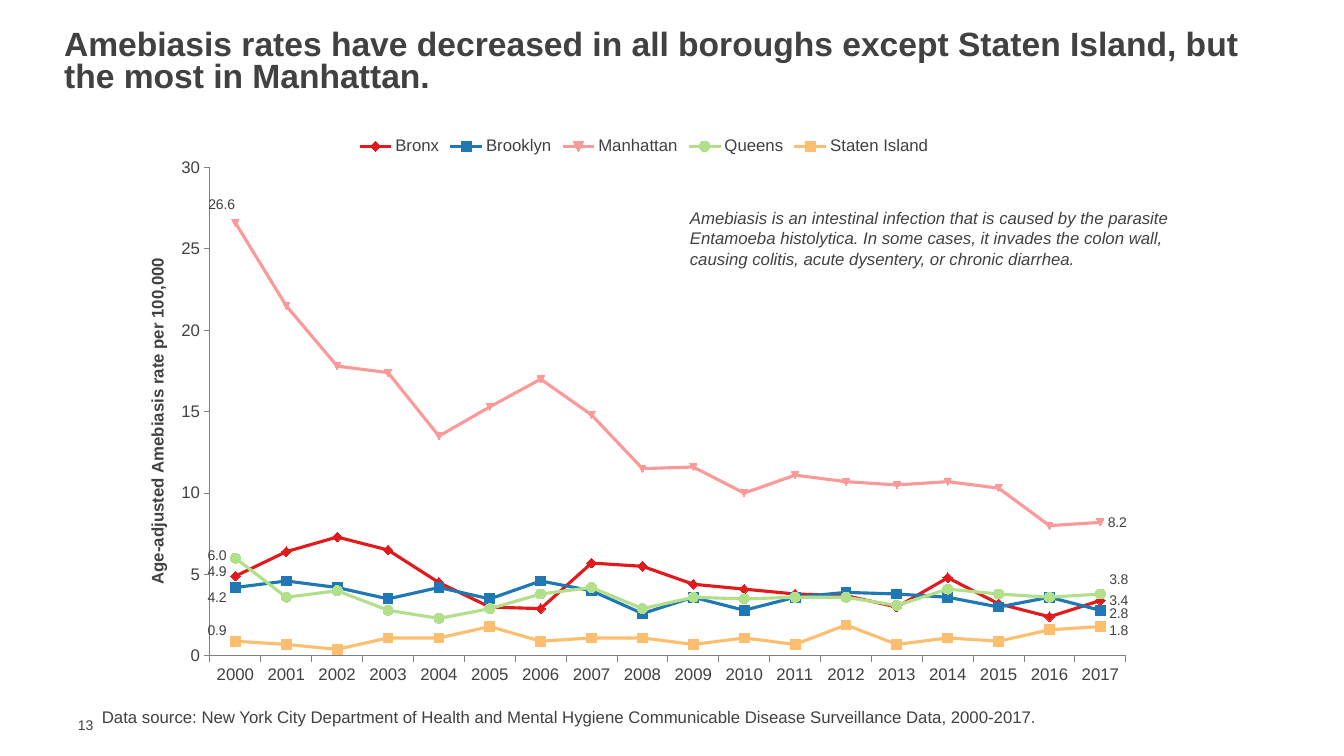
from lxml import etree
from pptx import Presentation
from pptx import util as u
from pptx.chart.data import CategoryChartData
from pptx.dml.color import RGBColor
from pptx.enum import chart as ch
from pptx.enum import text
from pptx.oxml import parse_xml
from pptx.oxml.ns import nsdecls, qn

EMU_PER_PX = 914400 / 100.8
INK = RGBColor(0x41, 0x40, 0x42)
AXIS_GRAY = RGBColor(0x80, 0x80, 0x80)
RED = RGBColor(0xE3, 0x1A, 0x1C)
BLUE = RGBColor(0x1F, 0x78, 0xB4)
PINK = RGBColor(0xFB, 0x9A, 0x99)
GREEN = RGBColor(0xB2, 0xDF, 0x8A)
ORANGE = RGBColor(0xFD, 0xBF, 0x6F)
MARK = ch.XL_MARKER_STYLE

YEARS = [str(year) for year in range(2000, 2018)]
# name, colour, marker, marker size, first and last label offsets in px, rates
BOROUGHS = [
    ("Bronx", RED, MARK.DIAMOND, 7, (0, -4), (0, 0),
     [4.9, 6.4, 7.3, 6.5, 4.5, 3, 2.9, 5.7, 5.5, 4.4, 4.1, 3.8, 3.7, 3, 4.8, 3.2, 2.4, 3.4]),
    ("Brooklyn", BLUE, MARK.SQUARE, 7, (0, 10), (0, 3),
     [4.2, 4.6, 4.2, 3.5, 4.2, 3.5, 4.6, 4, 2.6, 3.6, 2.8, 3.6, 3.9, 3.8, 3.6, 3, 3.6, 2.8]),
    ("Manhattan", PINK, MARK.AUTOMATIC, 5, (7, -18), (0, 0),
     [26.6, 21.5, 17.8, 17.4, 13.5, 15.3, 17, 14.8, 11.5, 11.6, 10, 11.1, 10.7, 10.5, 10.7,
      10.3, 8, 8.2]),
    ("Queens", GREEN, MARK.CIRCLE, 7, (0, -2), (0, -14),
     [6, 3.6, 4, 2.8, 2.3, 2.9, 3.8, 4.2, 2.9, 3.6, 3.5, 3.6, 3.6, 3.1, 4.1, 3.8, 3.6, 3.8]),
    ("Staten Island", ORANGE, MARK.SQUARE, 7, (0, -10), (0, 4),
     [0.9, 0.7, 0.4, 1.1, 1.1, 1.8, 0.9, 1.1, 1.1, 0.7, 1.1, 0.7, 1.9, 0.7, 1.1, 0.9, 1.6, 1.8]),
]


def px(*lengths):
    return [u.Emu(round(length * EMU_PER_PX)) for length in lengths]


def manual_layout(**values):
    items = "".join(f'<c:{name} val="{value}"/>' for name, value in values.items())
    return parse_xml(f'<c:layout {nsdecls("c")}><c:manualLayout>{items}'
                     '</c:manualLayout></c:layout>')


class SlideBuilder:
    font_name = "Arial"

    def __init__(self, presentation):
        self.slide = presentation.slides.add_slide(presentation.slide_layouts[5])

    def format_font(self, font, size, **values):
        values = {"name": self.font_name, "size": u.Pt(size), **values}
        for name, value in values.items():
            setattr(font, name, value)
        font.color.rgb = INK

    def title(self, box, words):
        shape = self.slide.shapes.title
        shape.left, shape.top, shape.width, shape.height = px(*box)
        frame = shape.text_frame
        frame.text = words
        frame.auto_size = text.MSO_AUTO_SIZE.NONE
        frame.vertical_anchor = text.MSO_ANCHOR.MIDDLE
        paragraph = frame.paragraphs[0]
        paragraph.alignment = text.PP_ALIGN.LEFT
        paragraph.line_spacing = 0.8
        self.format_font(paragraph.runs[0].font, 24, bold=True)

    def text_box(self, box, words, size=12, frame_format=None, **font_values):
        frame = self.slide.shapes.add_textbox(*px(*box)).text_frame
        for name, value in {"word_wrap": True, **(frame_format or {})}.items():
            setattr(frame, name, value)
        frame.text = words
        self.format_font(frame.paragraphs[0].runs[0].font, size, **font_values)

    def line_chart(self, box, axis_title):
        data = CategoryChartData(number_format="0.0")
        data.categories = YEARS
        for name, *_, rates in BOROUGHS:
            data.add_series(name, rates)
        chart = self.slide.shapes.add_chart(
            ch.XL_CHART_TYPE.LINE_MARKERS, *px(*box), data).chart
        self.format_font(chart.font, 10)
        chart.has_title = False
        chart.has_legend = True
        chart.legend.position = ch.XL_LEGEND_POSITION.TOP
        chart.legend.include_in_layout = False
        self.format_font(chart.legend.font, 12)

        for axis in (chart.category_axis, chart.value_axis):
            axis.has_major_gridlines = False
            axis.major_tick_mark = ch.XL_TICK_MARK.OUTSIDE
            axis.minor_tick_mark = ch.XL_TICK_MARK.NONE
            axis.format.line.color.rgb = AXIS_GRAY
            axis.format.line.width = u.Pt(0.75)
            self.format_font(axis.tick_labels.font, 12)
        axis = chart.value_axis
        axis.minimum_scale, axis.maximum_scale, axis.major_unit = 0, 30, 5
        axis.tick_labels.number_format = "0"
        axis.tick_labels.number_format_is_linked = False
        frame = axis.axis_title.text_frame
        frame.text = axis_title
        self.format_font(frame.paragraphs[0].runs[0].font, 12, bold=True)

        plot_area = chart.plots[0]._element.getparent()
        for layout in plot_area.findall(qn("c:layout")):
            plot_area.remove(layout)
        plot_area.insert(0, manual_layout(layoutTarget="inner", xMode="edge", yMode="edge",
                                          x=0.066, y=0.074, w=0.916, h=0.869))
        for series, borough in zip(chart.plots[0].series, BOROUGHS):
            self.style_series(series, borough, box)

    def style_series(self, series, borough, box):
        _, color, marker_style, marker_size, first, last, _ = borough
        series.smooth = False
        series.format.line.color.rgb = color
        series.format.line.width = u.Pt(2.25)
        marker = series.marker
        marker.style, marker.size = marker_style, marker_size
        marker.format.fill.solid()
        marker.format.fill.fore_color.rgb = color
        marker.format.line.color.rgb = color
        series.data_labels.show_value = False
        ends = [(0, ch.XL_LABEL_POSITION.LEFT, first),
                (len(YEARS) - 1, ch.XL_LABEL_POSITION.RIGHT, last)]
        for index, position, _ in ends:
            label = series.points[index].data_label
            self.format_font(label.font, 10)
            label.position = position
        labels = series._element.find(qn("c:dLbls"))
        for label, (_, _, (dx, dy)) in zip(labels.findall(qn("c:dLbl")), ends):
            if dx or dy:
                label.insert(1, manual_layout(x=round(dx / box[2], 4), y=round(dy / box[3], 4)))
        self.add_leader_lines(labels)

    @staticmethod
    def add_leader_lines(labels):
        namespace = "http://schemas.microsoft.com/office/drawing/2012/chart"
        extension = etree.SubElement(etree.SubElement(labels, qn("c:extLst")), qn("c:ext"),
                                     uri="{CE6537A1-D6FC-4f65-9D91-7224C49458BB}")
        etree.SubElement(extension, f"{{{namespace}}}showLeaderLines",
                         nsmap={"c15": namespace}, val="1")


def main():
    presentation = Presentation()
    presentation.slide_width, presentation.slide_height = px(1344, 756)
    builder = SlideBuilder(presentation)
    builder.text_box((68, 716, 43, 17), "13", size=10, frame_format={
        "margin_top": 0, "margin_right": 0, "margin_bottom": 0,
        "vertical_anchor": text.MSO_ANCHOR.MIDDLE})
    builder.text_box((92, 702, 1000, 30),
                     "Data source: New York City Department of Health and Mental Hygiene "
                     "Communicable Disease Surveillance Data, 2000-2017.")
    builder.line_chart((144, 126, 1000, 562), "Age-adjusted Amebiasis rate per 100,000")
    builder.title((54, 25, 1235, 76),
                  "Amebiasis rates have decreased in all boroughs except Staten Island, "
                  "but the most in Manhattan.")
    builder.text_box((680, 203, 512, 72),
                     "Amebiasis is an intestinal infection that is caused by the parasite "
                     "Entamoeba histolytica. In some cases, it invades the colon wall, causing "
                     "colitis, acute dysentery, or chronic diarrhea.", italic=True)
    presentation.save("out.pptx")


if __name__ == "__main__":
    main()
